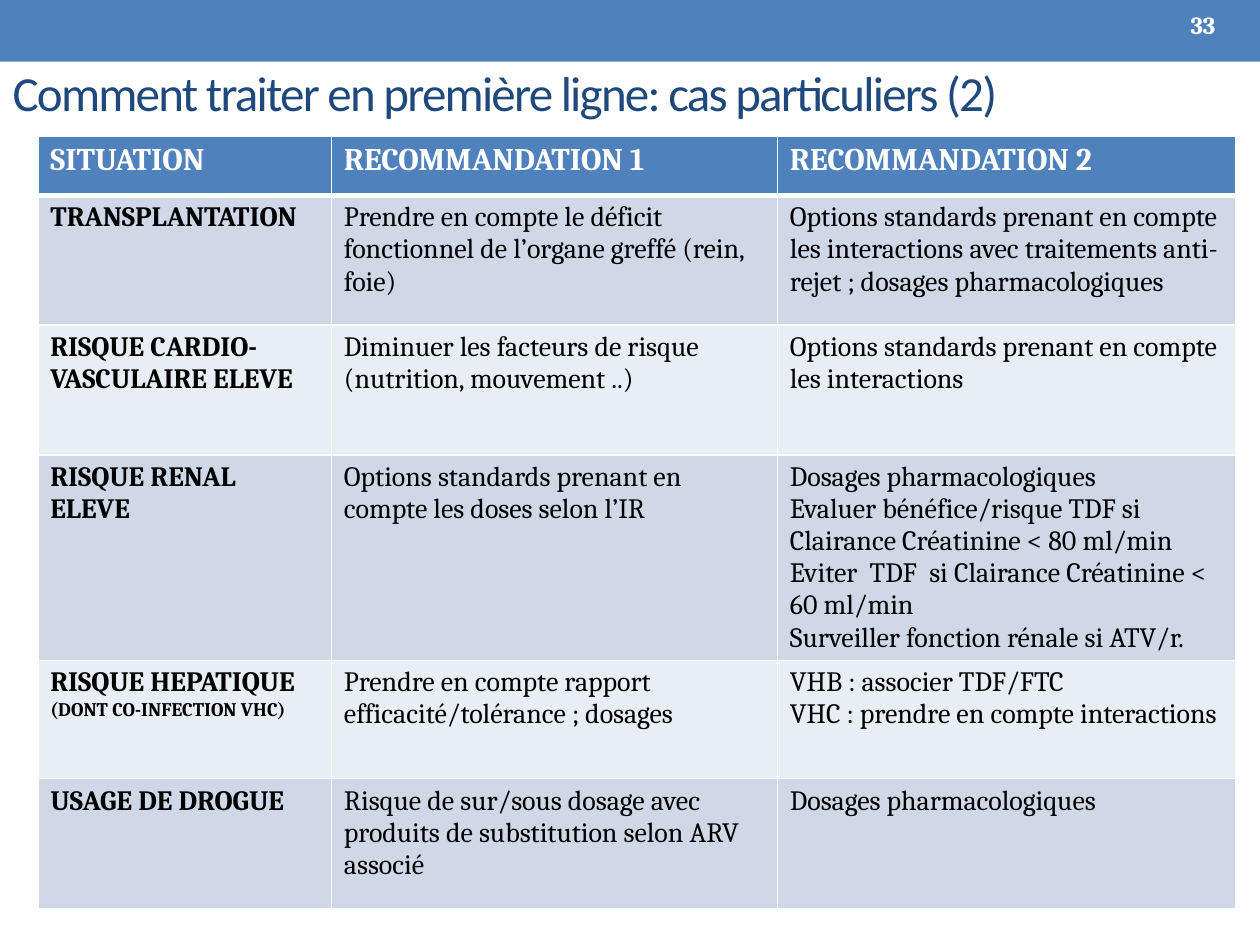
"""Build the slide on first-line treatment in special cases."""
from dataclasses import dataclass

from lxml.etree import SubElement
from pptx import Presentation
from pptx.dml.color import RGBColor
from pptx.enum.shapes import MSO_SHAPE
from pptx.enum.text import MSO_ANCHOR, PP_ALIGN
from pptx.oxml.ns import qn
from pptx.util import Inches, Pt

BLUE, WHITE, BLACK, NAVY = "4F81BD", "FFFFFF", "000000", "1F497D"
BANDS = ("D0D8E8", "E9EDF4")
COLUMN_WIDTHS = (2.33, 3.54, 3.64)
HEADINGS = ("SITUATION", "RECOMMANDATION 1", "RECOMMANDATION 2")


@dataclass
class Case:
    situation: str
    first: str
    second: tuple[str, ...]
    height: float = 1.03
    detail: str = ""


CASES = (
    Case("TRANSPLANTATION",
         "Prendre en compte le déficit fonctionnel de l’organe greffé (rein, foie)",
         ("Options standards prenant en compte les interactions avec traitements "
          "anti-rejet ; dosages pharmacologiques",)),
    Case("RISQUE CARDIO-VASCULAIRE ELEVE",
         "Diminuer les facteurs de risque (nutrition, mouvement ..)",
         ("Options standards prenant en compte les interactions",)),
    Case("RISQUE RENAL ELEVE",
         "Options standards prenant en compte les doses selon l’IR",
         ("Dosages pharmacologiques",
          "Evaluer bénéfice/risque TDF si Clairance Créatinine < 80 ml/min",
          "Eviter  TDF  si Clairance Créatinine < 60 ml/min",
          "Surveiller fonction rénale si ATV/r."), height=1.63),
    Case("RISQUE HEPATIQUE ",
         "Prendre en compte rapport efficacité/tolérance ; dosages",
         ("VHB : associer TDF/FTC", "VHC : prendre en compte interactions"),
         height=0.94, detail="(DONT CO-INFECTION VHC)"),
    Case("USAGE DE DROGUE",
         "Risque de sur/sous dosage avec produits de substitution selon ARV associé",
         ("Dosages pharmacologiques",)),
)


def rgb(value: str) -> RGBColor:
    """Turn a hex string into a colour."""
    return RGBColor.from_string(value)


def add_run(p, text: str, size: float, color: str, bold: bool = False,
            font: str = "Cambria"):
    """Add one formatted run to a paragraph."""
    r = p.add_run()
    r.text = text
    r.font.name, r.font.size, r.font.bold = font, Pt(size), bold
    r.font.color.rgb = rgb(color)
    return r


def style_cell(cell, fill: str, top: float = 1, bottom: float = 1) -> None:
    """Give a cell white borders and a solid fill."""
    tc_pr = cell._tc.get_or_add_tcPr()
    for side, width in (("L", 1), ("R", 1), ("T", top), ("B", bottom)):
        ln = SubElement(tc_pr, qn(f"a:ln{side}"), w=str(Pt(width)))
        SubElement(SubElement(ln, qn("a:solidFill")), qn("a:srgbClr"), val=WHITE)
    cell.fill.solid()
    cell.fill.fore_color.rgb = rgb(fill)


def add_banner(s) -> None:
    """Draw the top band."""
    sp = s.shapes.add_shape(MSO_SHAPE.RECTANGLE, 0, 0, Inches(10), Inches(0.49))
    sp.shadow.inherit = False
    sp.fill.solid()
    sp.fill.fore_color.rgb = rgb(BLUE)
    sp.line.fill.background()


def add_case_table(s) -> None:
    """Draw the table of situations and recommendations."""
    frame = s.shapes.add_table(len(CASES) + 1, len(HEADINGS), Inches(0.3), Inches(1.08),
                               Inches(sum(COLUMN_WIDTHS)), Inches(6.13))
    table = frame.table
    table.horz_banding = False
    for column, width in zip(table.columns, COLUMN_WIDTHS):
        column.width = Inches(width)
    table.rows[0].height = Inches(0.47)
    for cell, heading in zip(table.rows[0].cells, HEADINGS):
        style_cell(cell, BLUE, bottom=3)
        add_run(cell.text_frame.paragraphs[0], heading, 18, WHITE, True)
    for i, case in enumerate(CASES):
        row = table.rows[i + 1]
        row.height = Inches(case.height)
        for j, lines in enumerate(((case.situation,), (case.first,), case.second)):
            cell = row.cells[j]
            style_cell(cell, BANDS[i % 2], top=1 if i else 3)
            tf = cell.text_frame
            for k, line in enumerate(lines):
                p = tf.add_paragraph() if k else tf.paragraphs[0]
                add_run(p, line, 16, BLACK, j == 0)
        if case.detail:
            add_run(row.cells[0].text_frame.paragraphs[0], case.detail, 11, BLACK, True)


def add_title(s) -> None:
    """Place and fill the title."""
    sp = s.shapes.title
    sp.left, sp.top, sp.width, sp.height = 0, Inches(0.38), Inches(10), Inches(0.7)
    tf = sp.text_frame
    tf.vertical_anchor = MSO_ANCHOR.MIDDLE
    p = tf.paragraphs[0]
    p.alignment = PP_ALIGN.LEFT
    r = add_run(p, "Comment traiter en première ligne: cas particuliers (2)", 28, NAVY,
                font="Calibri")
    r.font._element.set("spc", "-100")


def add_page_number(s) -> None:
    """Write the page number in the band."""
    sp = s.shapes.add_textbox(Inches(9.35), Inches(0.02), Inches(0.65), Inches(0.36))
    tf = sp.text_frame
    tf.word_wrap = True
    tf.vertical_anchor = MSO_ANCHOR.MIDDLE
    add_run(tf.paragraphs[0], "33", 14, WHITE, True)


def main() -> None:
    """Build and save the presentation."""
    prs = Presentation()
    prs.slide_width, prs.slide_height = Inches(10), Inches(7.5)
    s = prs.slides.add_slide(prs.slide_layouts[5])
    add_banner(s)
    add_case_table(s)
    add_title(s)
    add_page_number(s)
    prs.save("out.pptx")


if __name__ == "__main__":
    main()
